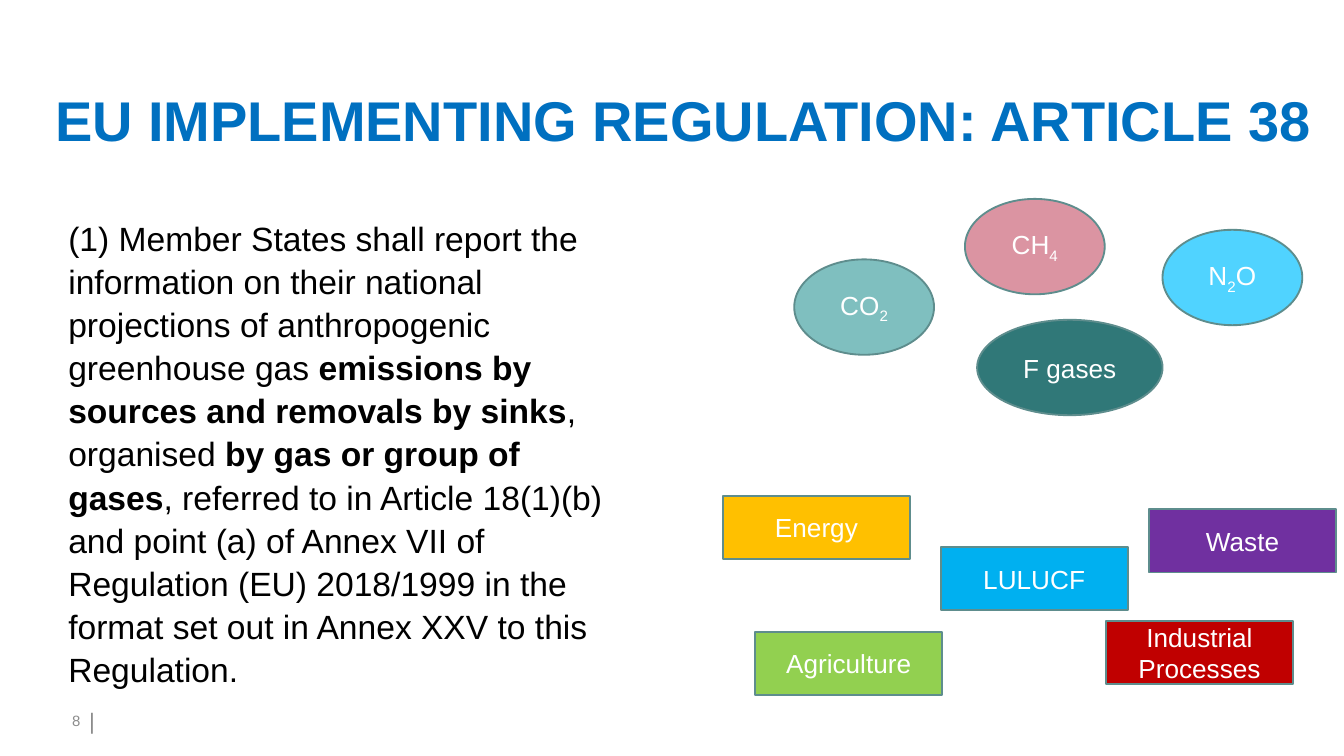
from dataclasses import dataclass

from pptx import Presentation
from pptx.dml.color import RGBColor
from pptx.enum.shapes import MSO_SHAPE
from pptx.enum.text import MSO_ANCHOR, PP_ALIGN
from pptx.util import Inches, Pt

OVAL, RECTANGLE = MSO_SHAPE.OVAL, MSO_SHAPE.RECTANGLE
TOP, MIDDLE = MSO_ANCHOR.TOP, MSO_ANCHOR.MIDDLE
LEFT, CENTER, RIGHT = PP_ALIGN.LEFT, PP_ALIGN.CENTER, PP_ALIGN.RIGHT

# Grid of square cells, ten to the inch, on a 16:9 slide
COLUMNS, ROWS = 100, 56.25
CELL = Inches(0.1)


@dataclass(frozen=True)
class Theme:
    font: str = "Arial"
    title: str = "0070C0"
    body: str = "000000"
    footer: str = "8C8C8C"
    label: str = "FFFFFF"
    outline: str = "5E8D8D"
    title_size: int = 30
    body_size: int = 18
    label_size: int = 14
    divider_size: int = 12
    number_size: int = 8


THEME = Theme()

TITLE = "EU IMPLEMENTING REGULATION: ARTICLE 38"

ARTICLE = [
    ("(1) Member States shall report the information on their national "
     "projections of anthropogenic greenhouse gas ", ""),
    ("emissions by sources and removals by sinks", "bold"),
    (", organised ", ""),
    ("by gas or group of gases", "bold"),
    (", referred to in Article 18(1)(b) and point (a) of Annex VII of "
     "Regulation (EU) 2018/1999 in the format set out in Annex XXV to this "
     "Regulation.", ""),
]

# Runs, fill, left column, top row, width in columns
GASES = [
    ([("CO", ""), ("2", "sub")], "7FBFBF", 59.1, 19.3, 10.4),
    ([("CH", ""), ("4", "sub")], "DB94A2", 71.8, 14.8, 10.4),
    ([("N", ""), ("2", "sub"), ("O", "")], "50D3FF", 86.5, 17.1, 10.4),
    ([("F gases", "")], "307878", 72.7, 23.8, 13.8),
]
GAS_HEIGHT = 7.1

# Name, fill, left column, top row
SECTORS = [
    ("Energy", "FFC000", 53.8, 36.9),
    ("Industrial Processes", "C00000", 82.3, 46.2),
    ("Agriculture", "92D050", 56.2, 47),
    ("LULUCF", "00B0F0", 70, 40.7),
    ("Waste", "7030A0", 85.5, 37.9),
]
SECTOR_SIZE = (13.9, 4.7)


def cells(*counts):
    return [round(count * CELL) for count in counts]


def write(frame, runs, size, color, align=LEFT, bold=False):
    """Fill the first paragraph with (text, style) runs and return it."""
    paragraph = frame.paragraphs[0]
    paragraph.alignment = align
    font = paragraph.font
    font.name, font.size, font.bold = THEME.font, Pt(size), bold
    font.color.rgb = RGBColor.from_string(color)
    for text, style in runs:
        run = paragraph.add_run()
        run.text = text
        if style == "bold":
            run.font.bold = True
        elif style == "sub":
            run._r.get_or_add_rPr().set("baseline", "-25000")
    return paragraph


def add_text(slide, area, runs, size, color, align=LEFT, bold=False,
             anchor=TOP, wrap=True, inset=True):
    frame = slide.shapes.add_textbox(*cells(*area)).text_frame
    frame.word_wrap = wrap
    frame.vertical_anchor = anchor
    if not inset:
        frame.margin_left = frame.margin_right = 0
        frame.margin_top = frame.margin_bottom = 0
    return write(frame, runs, size, color, align, bold)


def add_label(slide, outline, area, runs, fill):
    label = slide.shapes.add_shape(outline, *cells(*area))
    label.shadow.inherit = False
    label.fill.solid()
    label.fill.fore_color.rgb = RGBColor.from_string(fill)
    label.line.color.rgb = RGBColor.from_string(THEME.outline)
    label.line.width = Pt(1)
    label.text_frame.vertical_anchor = MIDDLE
    write(label.text_frame, runs, THEME.label_size, THEME.label, CENTER)


def add_footer(slide):
    for area, text, size, align in [
        ((6.3, 52.1, 1.1, 3), "|", THEME.divider_size, CENTER),
        ((4.7, 52.1, 1.3, 3), "8", THEME.number_size, RIGHT),
    ]:
        add_text(slide, area, [(text, "")], size, THEME.footer, align,
                 anchor=MIDDLE, wrap=False, inset=False)


def main():
    deck = Presentation()
    deck.slide_width, deck.slide_height = cells(COLUMNS, ROWS)
    slide = deck.slides.add_slide(deck.slide_layouts[6])

    # Title and footer
    add_text(slide, (4.1, 6.4, 94.2, 7.6), [(TITLE, "")], THEME.title_size,
             THEME.title, bold=True, inset=False)
    add_footer(slide)

    # Wording of the article
    article = add_text(slide, (4.1, 15.5, 43.9, 36.7), ARTICLE,
                       THEME.body_size, THEME.body)
    article.line_spacing = 1.07
    article.space_after = Pt(8)

    # Greenhouse gases
    for runs, fill, left, top, width in GASES:
        add_label(slide, OVAL, (left, top, width, GAS_HEIGHT), runs, fill)

    # Emission sectors
    for name, fill, left, top in SECTORS:
        add_label(slide, RECTANGLE, (left, top, *SECTOR_SIZE),
                  [(name, "")], fill)

    deck.save("out.pptx")


if __name__ == "__main__":
    main()
